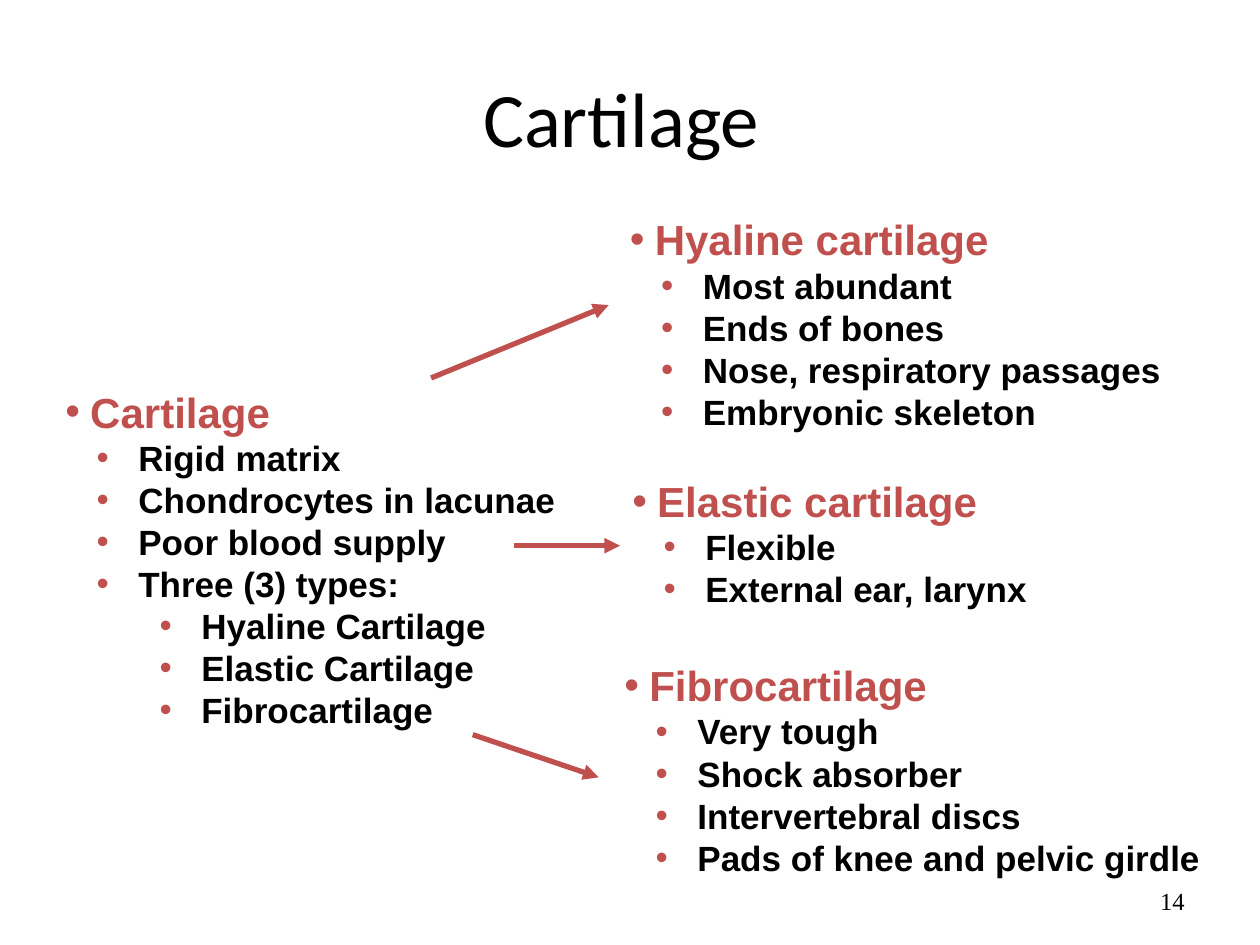
import pptx
import pptx.dml.color
import pptx.enum.shapes
import pptx.enum.text
import pptx.oxml.ns
import pptx.util
from lxml import etree

Cm = pptx.util.Cm
Pt = pptx.util.Pt
ALIGN = pptx.enum.text.PP_ALIGN
ANCHOR = pptx.enum.text.MSO_ANCHOR
COLOURS = {"accent": "C0504D", "text": "000000"}

LEVELS = [
    {"margin": 0.5, "hanging": 0.5, "size": 24, "spacing": 30, "colour": "accent"},
    {"margin": 1.47, "hanging": 0.84, "size": 20, "spacing": 24, "colour": "text"},
    {"margin": 2.74, "hanging": 0.84, "size": 20, "spacing": 24, "colour": "text"},
]

TOPICS = [
    ((1.07, 7.62, 10.72, 7.26), [
        (0, "Cartilage"),
        (1, "Rigid matrix"),
        (1, "Chondrocytes in lacunae"),
        (1, "Poor blood supply"),
        (1, "Three (3) types:"),
        (2, "Hyaline Cartilage"),
        (2, "Elastic Cartilage"),
        (2, "Fibrocartilage"),
    ]),
    ((12.45, 4.14, 11.56, 4.7), [
        (0, "Hyaline cartilage"),
        (1, "Most abundant"),
        (1, "Ends of bones"),
        (1, "Nose, respiratory passages"),
        (1, "Embryonic skeleton"),
    ]),
    ((12.5, 9.42, 8.76, 3),  [
        (0, "Elastic cartilage"),
        (1, "Flexible"),
        (1, "External ear, larynx"),
    ]),
    ((12.34, 13.13, 12.45, 4.7), [
        (0, "Fibrocartilage"),
        (1, "Very tough"),
        (1, "Shock absorber"),
        (1, "Intervertebral discs"),
        (1, "Pads of knee and pelvic girdle"),
    ]),
]

ARROWS = [
    (8.69, 7.62, 12.27, 6.15),
    (10.36, 11, 12.5, 11),
    (9.53, 14.81, 12.07, 15.67),
]


def colour(name):
    return pptx.dml.color.RGBColor.from_string(COLOURS[name])


def add_child(parent, tag, **attributes):
    return etree.SubElement(parent, pptx.oxml.ns.qn(tag), attributes)


def add_box(page, place, anchor=ANCHOR.TOP):
    box = page.shapes.add_textbox(*map(Cm, place))
    box.text_frame.word_wrap = True
    box.text_frame.vertical_anchor = anchor
    return box


def write(para, text, *, size, font="Arial", fill="text", bold=False, align=ALIGN.LEFT):
    para.alignment = align
    span = para.add_run()
    span.text = text
    span.font.size = Pt(size)
    span.font.name = font
    span.font.bold = bold
    span.font.color.rgb = colour(fill)


def add_bullet(para, level):
    style = LEVELS[level]
    para.level = level
    para.line_spacing = Pt(style["spacing"])
    properties = para._p.get_or_add_pPr()
    properties.set("marL", str(Cm(style["margin"])))
    properties.set("indent", str(-Cm(style["hanging"])))
    bullet_colour = add_child(properties, "a:buClr")
    add_child(bullet_colour, "a:srgbClr", val=COLOURS["accent"])
    add_child(properties, "a:buFont", typeface="Arial")
    add_child(properties, "a:buChar", char="•")


def add_topic(page, place, items):
    frame = add_box(page, place).text_frame
    for index, (level, text) in enumerate(items):
        para = frame.add_paragraph() if index else frame.paragraphs[0]
        add_bullet(para, level)
        style = LEVELS[level]
        write(para, text, size=style["size"], fill=style["colour"], bold=True)


def add_arrow(page, ends):
    arrow = page.shapes.add_connector(
        pptx.enum.shapes.MSO_CONNECTOR.STRAIGHT, *map(Cm, ends))
    arrow.line.color.rgb = colour("accent")
    arrow.line.width = Pt(3)
    add_child(arrow.line._get_or_add_ln(), "a:tailEnd", type="triangle")
    add_child(arrow._element.spPr, "a:effectLst")


def main():
    deck = pptx.Presentation()
    deck.slide_width, deck.slide_height = Cm(25.4), Cm(19.05)
    page = deck.slides.add_slide(deck.slide_layouts[6])

    number = add_box(page, (18.21, 17.65, 5.92, 1.02), ANCHOR.MIDDLE)
    write(number.text_frame.paragraphs[0], "14", size=14,
          font="Times New Roman", align=ALIGN.RIGHT)
    for place, items in TOPICS:
        add_topic(page, place, items)
    for ends in ARROWS:
        add_arrow(page, ends)
    title = add_box(page, (1.27, 0.76, 22.86, 3.18), ANCHOR.MIDDLE)
    write(title.text_frame.paragraphs[0], "Cartilage ", size=44,
          font="Calibri", align=ALIGN.CENTER)

    deck.save("out.pptx")


if __name__ == "__main__":
    main()
